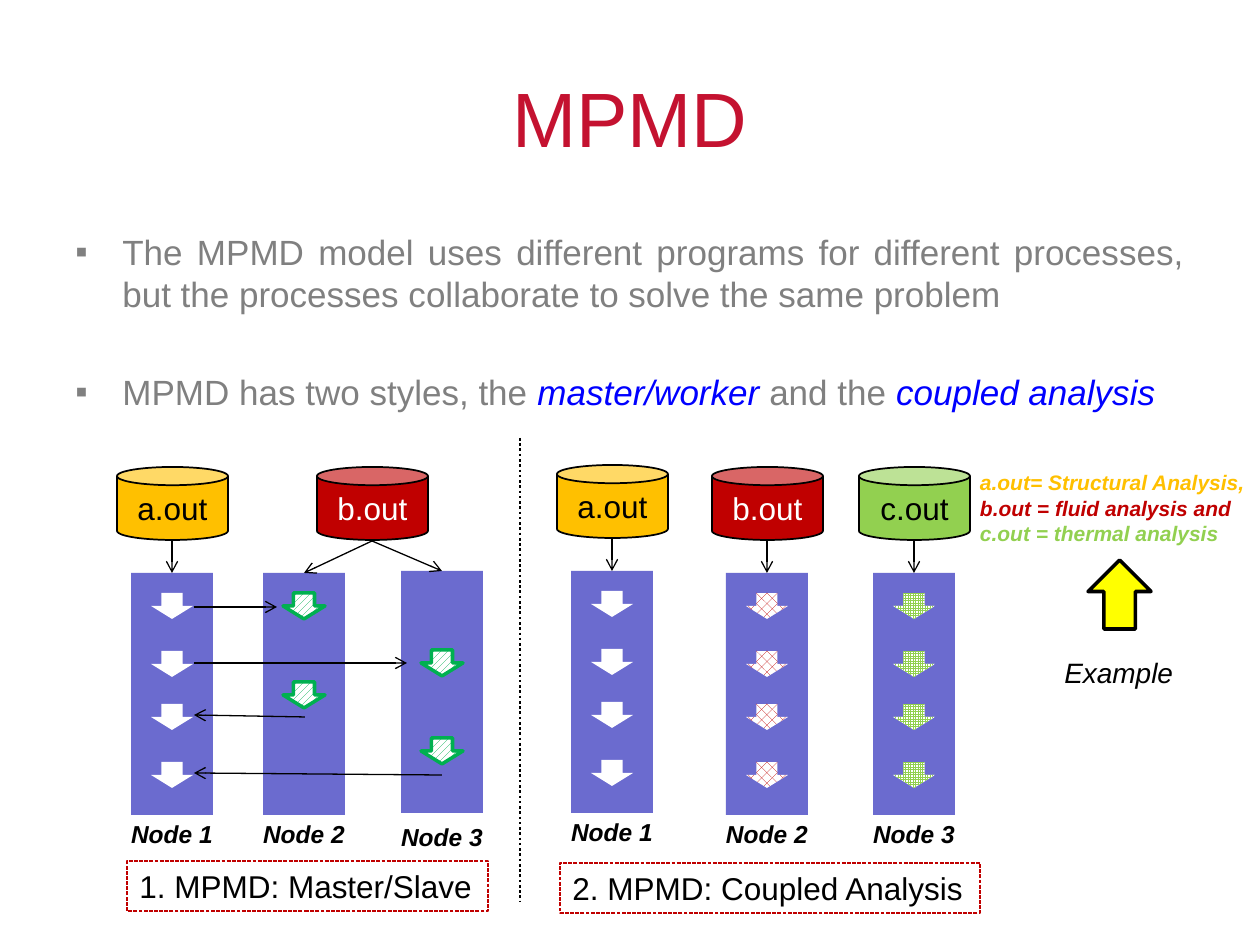
from lxml import etree
from pptx import Presentation
from pptx.dml.color import RGBColor
from pptx.enum.dml import MSO_LINE, MSO_PATTERN
from pptx.enum.shapes import MSO_CONNECTOR, MSO_SHAPE
from pptx.enum.text import MSO_ANCHOR, PP_ALIGN
from pptx.oxml.ns import qn
from pptx.util import Pt

EMU_PER_PX = 914400 / 126
COLORS = {
    "title": "C41230", "body": "808080", "accent": "0000FF",
    "node": "6B6BCF", "black": "000000", "white": "FFFFFF",
    "amber": "FFC000", "red": "C00000", "lime": "92D050",
    "green": "00B050", "yellow": "FFFF00",
}
PROGRAMS = {
    "a.out": ("amber", "black"),
    "b.out": ("red", "white"),
    "c.out": ("lime", "black"),
}
NODE_W, NODE_H = 82, 242
CAN_W, CAN_H, CAN_RISE = 111, 73, 106
STEP_W, STEP_H = 42, 26
ALL_STEPS = (20, 78, 131, 189)


def px(length):
    return round(length * EMU_PER_PX)


def color(name):
    return RGBColor.from_string(COLORS[name])


def add_run(paragraph, text, size, tint, bold=False, italic=False):
    run = paragraph.add_run()
    run.text = text
    run.font.name = "Arial"
    run.font.size = Pt(size)
    run.font.color.rgb = color(tint)
    run.font.bold = bold
    run.font.italic = italic


def add_text(slide, box, wrap=True, inset=True):
    frame = slide.shapes.add_textbox(*map(px, box)).text_frame
    frame.word_wrap = wrap
    if not inset:
        frame.margin_left = frame.margin_right = 0
        frame.margin_top = frame.margin_bottom = 0
    return frame


def add_shape(slide, kind, box, fill=None, line=None, width=1, pattern=None):
    shape = slide.shapes.add_shape(kind, *map(px, box))
    shape.shadow.inherit = False
    if pattern:
        shape.fill.patterned()
        shape.fill.pattern = pattern
        shape.fill.fore_color.rgb = color(fill)
        shape.fill.back_color.rgb = color("white")
    elif fill:
        shape.fill.solid()
        shape.fill.fore_color.rgb = color(fill)
    else:
        shape.fill.background()
    if line:
        shape.line.color.rgb = color(line)
        shape.line.width = Pt(width)
    else:
        shape.line.fill.background()
    return shape


def add_line(slide, start, end, width=0.75, arrow=True):
    line = slide.shapes.add_connector(
        MSO_CONNECTOR.STRAIGHT, *map(px, (*start, *end)))
    line.line.color.rgb = color("black")
    line.line.width = Pt(width)
    if arrow:
        etree.SubElement(line.line._get_or_add_ln(), qn("a:tailEnd"), type="arrow")
    etree.SubElement(line._element.spPr, qn("a:effectLst"))
    return line


def add_title(slide, box):
    frame = add_text(slide, box)
    frame.vertical_anchor = MSO_ANCHOR.MIDDLE
    frame.paragraphs[0].alignment = PP_ALIGN.CENTER
    add_run(frame.paragraphs[0], "MPMD", 44, "title")


def add_bullets(slide, box):
    points = [
        [("The MPMD model uses different programs for different processes, "
          "but the processes collaborate to solve the same problem", False)],
        [("MPMD has two styles, the ", False), ("master/worker", True),
         (" and the ", False), ("coupled analysis", True)],
    ]
    frame = add_text(slide, box)
    for index, point in enumerate(points):
        paragraph = frame.add_paragraph() if index else frame.paragraphs[0]
        properties = paragraph._p.get_or_add_pPr()
        properties.set("marL", str(px(47)))
        properties.set("indent", str(-px(47)))
        etree.SubElement(properties, qn("a:buFont"), typeface="Arial")
        etree.SubElement(properties, qn("a:buChar"), char="▪")
        paragraph.alignment = PP_ALIGN.JUSTIFY
        if index:
            paragraph.space_before = Pt(32)
        for text, stressed in point:
            add_run(paragraph, text, 20, "accent" if stressed else "body",
                    italic=stressed)


def add_program(slide, name, left, top):
    """Draw a program can and return the point at the middle of its base."""
    fill, ink = PROGRAMS[name]
    can = add_shape(slide, MSO_SHAPE.CAN, (left, top, CAN_W, CAN_H), fill, "black")
    can.text_frame.vertical_anchor = MSO_ANCHOR.MIDDLE
    paragraph = can.text_frame.paragraphs[0]
    paragraph.alignment = PP_ALIGN.CENTER
    add_run(paragraph, name, 18, ink)
    return left + CAN_W // 2, top + CAN_H + 1


def add_node(slide, left, top, label, steps, label_gap=4, **step_style):
    """Draw a node bar with its steps and return the middle of its top edge."""
    add_shape(slide, MSO_SHAPE.RECTANGLE, (left, top, NODE_W, NODE_H), "node")
    for step in steps:
        add_shape(slide, MSO_SHAPE.DOWN_ARROW,
                  (left + (NODE_W - STEP_W) // 2, top + step, STEP_W, STEP_H),
                  **step_style)
    caption = add_text(slide, (left, top + NODE_H + label_gap, NODE_W, 30),
                       wrap=False, inset=False)
    add_run(caption.paragraphs[0], label, 14, "black", bold=True, italic=True)
    return left + NODE_W // 2, top


def add_caption(slide, box, text):
    frame_box = add_shape(slide, MSO_SHAPE.RECTANGLE, box, line="red", width=0.75)
    frame_box.line.dash_style = MSO_LINE.SQUARE_DOT
    # The outline uses the short system dash
    frame_box.line._get_or_add_ln().find(qn("a:prstDash")).set("val", "sysDash")
    frame = frame_box.text_frame
    frame.word_wrap = False
    paragraph = frame.paragraphs[0]
    paragraph.alignment = PP_ALIGN.LEFT
    add_run(paragraph, text, 18, "black")


def add_master_panel(slide, left, top):
    node_top = top + CAN_RISE
    worker = dict(fill="green", line="green", width=2,
                  pattern=MSO_PATTERN.WIDE_UPWARD_DIAGONAL)
    master = add_node(slide, left + 14, node_top, "Node 1", ALL_STEPS, fill="white")
    workers = [
        add_node(slide, left + 146, node_top, "Node 2", (20, 109), **worker),
        add_node(slide, left + 284, node_top - 2, "Node 3", (79, 167), 9, **worker),
    ]
    add_line(slide, add_program(slide, "a.out", left, top), master)
    shared = add_program(slide, "b.out", left + 200, top)
    for worker_top in workers:
        add_line(slide, shared, worker_top)
    messages = [((77, 140), (160, 140)), ((77, 196), (290, 196)),
                ((188, 250), (77, 248)), ((325, 308), (77, 306))]
    for start, end in messages:
        add_line(slide, (left + start[0], top + start[1]),
                 (left + end[0], top + end[1]))
    add_caption(slide, (left + 10, top + 394, 361, 50), "1. MPMD: Master/Slave")


def add_coupled_panel(slide, left, top):
    columns = [
        ("a.out", 0, -2, dict(fill="white")),
        ("b.out", 155, 0, dict(fill="red", pattern=MSO_PATTERN.WEAVE)),
        ("c.out", 302, 0, dict(fill="lime", pattern=MSO_PATTERN.SMALL_GRID)),
    ]
    for number, (name, dx, dy, style) in enumerate(columns, 1):
        node = add_node(slide, left + dx + 14, top + dy + CAN_RISE,
                        f"Node {number}", ALL_STEPS, **style)
        add_line(slide, add_program(slide, name, left + dx, top + dy), node)
    add_caption(slide, (left + 3, top + 396, 420, 50), "2. MPMD: Coupled Analysis")


def add_example(slide, left, top):
    legend = add_text(slide, (left, top, 280, 77), inset=False)
    meanings = [("a.out= Structural Analysis,", "amber"),
                ("b.out = fluid analysis and", "red"),
                ("c.out = thermal analysis", "lime")]
    for index, (text, tint) in enumerate(meanings):
        paragraph = legend.add_paragraph() if index else legend.paragraphs[0]
        add_run(paragraph, text, 12, tint, bold=True, italic=True)
    pointer = add_shape(slide, MSO_SHAPE.DOWN_ARROW, (left + 108, top + 90, 63, 69),
                        "yellow", "black", 2)
    pointer.rotation = 180
    example = add_text(slide, (left + 72, top + 179, 135, 47), wrap=False)
    add_run(example.paragraphs[0], "Example", 16, "black", italic=True)


def main():
    deck = Presentation()
    deck.slide_width, deck.slide_height = px(1260), px(945)
    slide = deck.slides.add_slide(deck.slide_layouts[6])
    add_title(slide, (63, 38, 1134, 158))
    add_bullets(slide, (63, 224, 1134, 200))
    add_master_panel(slide, 117, 467)
    add_coupled_panel(slide, 557, 467)
    add_example(slide, 980, 470)
    divider = add_line(slide, (520, 438), (520, 901), 1.5, arrow=False)
    divider.line.dash_style = MSO_LINE.ROUND_DOT
    deck.save("out.pptx")


if __name__ == "__main__":
    main()
